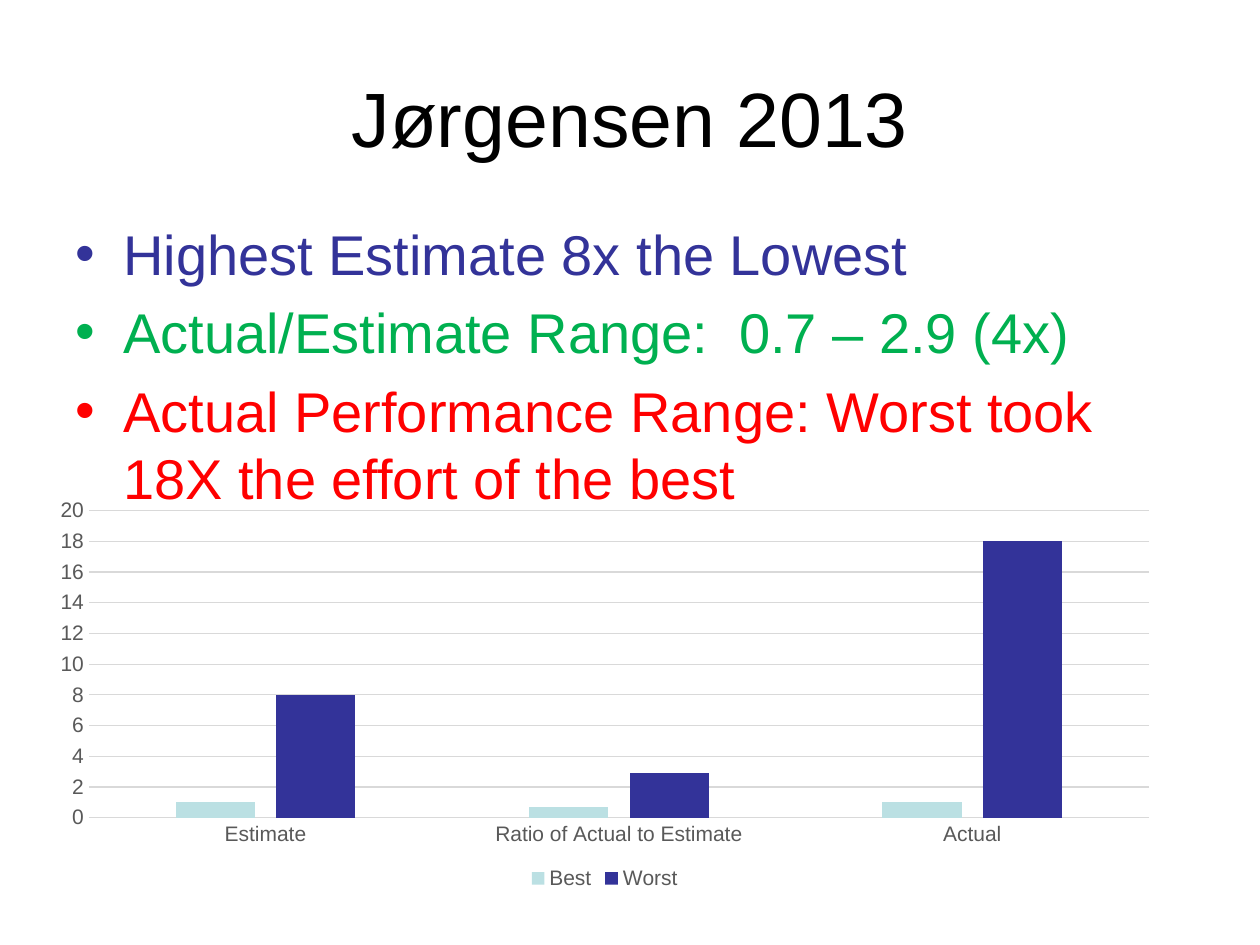
from pptx import Presentation
from pptx.chart.data import CategoryChartData
from pptx.dml.color import RGBColor as RGB
from pptx.enum.chart import XL_CHART_TYPE as ChartType, XL_LEGEND_POSITION as LegendPos, XL_TICK_MARK as Tick
from pptx.enum.text import MSO_ANCHOR as Anchor, PP_ALIGN as Align
from pptx.oxml.ns import qn
from pptx.util import Inches, Pt
from lxml.etree import SubElement

THEME = {
    "font": "Arial",
    "title": "000000", "blue": "333399", "green": "00B050", "red": "FF0000",
    "pale": "BBE0E3", "label": "595959", "grid": "D9D9D9",
    "title_size": 44, "body_size": 32, "label_size": 12,
}
TITLE = "Jørgensen 2013"
BULLETS = [
    ("Highest Estimate 8x the Lowest", "blue"),
    ("Actual/Estimate Range:  0.7 – 2.9 (4x)", "green"),
    ("Actual Performance Range: Worst took 18X the effort of the best", "red"),
]
CATEGORIES = ["Estimate", "Ratio of Actual to Estimate", "Actual"]
SERIES = [("Best", [1, 0.7, 1], "pale"), ("Worst", [8, 2.9, 18], "blue")]
TITLE_BOX = (0.5, 0.3, 9, 1.25)
BODY_BOX = (0.5, 1.69, 8.42, 4.95)
CHART_BOX = (0.3, 3.9, 9, 3.2)
INDENT = Inches(0.38)


def color(name):
    return RGB.from_string(THEME[name])


def style(font, size, name):
    font.name = THEME["font"]
    font.size = Pt(THEME[size])
    font.color.rgb = color(name)


def add_run(p, text, size, name):
    r = p.add_run()
    r.text = text
    style(r.font, size, name)


def add_title(s):
    sp = s.shapes.title
    sp.left, sp.top, sp.width, sp.height = map(Inches, TITLE_BOX)
    tf = sp.text_frame
    tf.vertical_anchor = Anchor.MIDDLE
    p = tf.paragraphs[0]
    p.alignment = Align.CENTER
    add_run(p, TITLE, "title_size", "title")


def add_bullets(s):
    tf = s.shapes.add_textbox(*map(Inches, BODY_BOX)).text_frame
    tf.word_wrap = True
    for i, (text, name) in enumerate(BULLETS):
        p = tf.add_paragraph() if i else tf.paragraphs[0]
        p.space_before = Pt(THEME["body_size"] * 0.2)
        pPr = p._p.get_or_add_pPr()
        pPr.set("marL", str(INDENT))
        pPr.set("indent", str(-INDENT))
        SubElement(pPr, qn("a:buFont"), typeface=THEME["font"])
        SubElement(pPr, qn("a:buChar"), char="•")
        add_run(p, text, "body_size", name)


def add_effort_chart(s):
    data = CategoryChartData()
    data.categories = CATEGORIES
    for name, values, _ in SERIES:
        data.add_series(name, values)
    chart = s.shapes.add_chart(ChartType.COLUMN_CLUSTERED, *map(Inches, CHART_BOX), data).chart
    chart.has_title = False
    style(chart.font, "label_size", "label")

    plot = chart.plots[0]
    plot.vary_by_categories = False
    plot.gap_width, plot.overlap = 219, -27
    for series, (_, _, name) in zip(plot.series, SERIES):
        series.format.fill.solid()
        series.format.fill.fore_color.rgb = color(name)

    cat, val = chart.category_axis, chart.value_axis
    for axis in (cat, val):
        axis.major_tick_mark = axis.minor_tick_mark = Tick.NONE
        style(axis.tick_labels.font, "label_size", "label")
    val.minimum_scale, val.maximum_scale, val.major_unit = 0, 20, 2
    val.has_major_gridlines = True
    val.format.line.fill.background()
    for line in (cat.format.line, val.major_gridlines.format.line):
        line.color.rgb = color("grid")
        line.width = Pt(0.75)

    chart.has_legend = True
    chart.legend.position = LegendPos.BOTTOM
    chart.legend.include_in_layout = False
    style(chart.legend.font, "label_size", "label")


def main():
    prs = Presentation()
    prs.slide_width, prs.slide_height = Inches(10), Inches(7.5)
    s = prs.slides.add_slide(prs.slide_layouts[5])
    add_title(s)
    add_bullets(s)
    add_effort_chart(s)
    prs.save("out.pptx")


if __name__ == "__main__":
    main()
